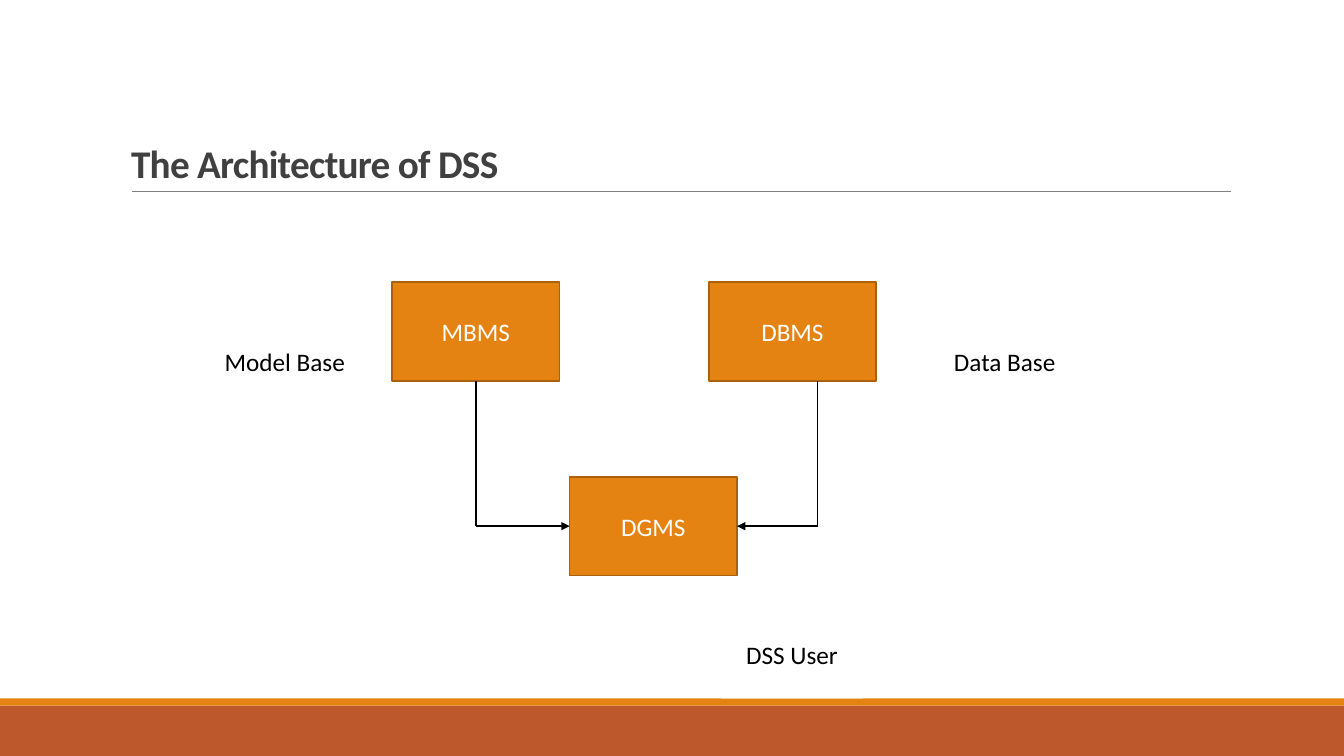
import lxml.etree
import pptx
import pptx.util
import pptx.dml.color
import pptx.enum.shapes
import pptx.enum.text
import pptx.oxml.ns
from pptx.util import Inches

COLORS = {
    "orange": "E48312", "rust": "BD582C", "edge": "A9610D", "rule": "808080",
    "title": "404040", "white": "FFFFFF", "black": "000000",
}
FONT = "Calibri"
BOX_W, BOX_H = 1.66, 0.98
LABEL_W, LABEL_H = 1.41, 0.88


def rgb(name):
    return pptx.dml.color.RGBColor.from_string(COLORS[name])


def add_run(p, text, size, color, bold=False):
    r = p.add_run()
    r.text = text
    r.font.name = FONT
    r.font.size = pptx.util.Pt(size)
    r.font.bold = bold
    r.font.color.rgb = rgb(color)
    return r


def add_rect(s, left, top, width, height, fill, edge=None):
    sp = s.shapes.add_shape(pptx.enum.shapes.MSO_SHAPE.RECTANGLE, Inches(left),
                            Inches(top), Inches(width), Inches(height))
    sp.shadow.inherit = False
    sp.fill.solid()
    sp.fill.fore_color.rgb = rgb(fill)
    if edge:
        sp.line.color.rgb = rgb(edge)
        sp.line.width = pptx.util.Pt(1.25)
    else:
        sp.line.fill.background()
    return sp


def add_centered_text(sp, text, color):
    tf = sp.text_frame
    tf.word_wrap = True
    tf.vertical_anchor = pptx.enum.text.MSO_ANCHOR.MIDDLE
    p = tf.paragraphs[0]
    p.alignment = pptx.enum.text.PP_ALIGN.CENTER
    add_run(p, text, 18, color)


def add_box(s, text, left, top):
    sp = add_rect(s, left, top, BOX_W, BOX_H, "orange", "edge")
    add_centered_text(sp, text, "white")


def add_label(s, text, left, top):
    sp = add_rect(s, left, top, LABEL_W, LABEL_H, "white")
    add_centered_text(sp, text, "black")


def add_line(s, x1, y1, x2, y2, color="black", width=1, arrow=False):
    qn = pptx.oxml.ns.qn
    cn = s.shapes.add_connector(pptx.enum.shapes.MSO_CONNECTOR.STRAIGHT, Inches(x1),
                                Inches(y1), Inches(x2), Inches(y2))
    cn.line.color.rgb = rgb(color)
    cn.line.width = pptx.util.Pt(width)
    props = cn._element.spPr
    if arrow:
        lxml.etree.SubElement(props.find(qn("a:ln")), qn("a:tailEnd"), type="triangle")
    lxml.etree.SubElement(props, qn("a:effectLst"))


def set_title(s, text):
    sp = s.shapes.title
    sp.left, sp.top, sp.width, sp.height = (Inches(v) for v in (1.2, 0.31, 11, 1.59))
    tf = sp.text_frame
    tf.word_wrap = True
    tf.auto_size = pptx.enum.text.MSO_AUTO_SIZE.NONE
    tf.vertical_anchor = pptx.enum.text.MSO_ANCHOR.BOTTOM
    p = tf.paragraphs[0]
    p.alignment = pptx.enum.text.PP_ALIGN.LEFT
    p.line_spacing = 0.85
    r = add_run(p, text, 28, "title", bold=True)
    r.font._element.set("spc", "-50")


def main():
    prs = pptx.Presentation()
    prs.slide_width, prs.slide_height = Inches(13.33), Inches(7.5)
    s = prs.slides.add_slide(prs.slide_layouts[5])

    # Footer bands, title and rule
    add_rect(s, 0, 7, 13.33, 0.5, "rust")
    add_rect(s, 0, 6.93, 13.33, 0.07, "orange")
    add_line(s, 1.31, 1.9, 12.21, 1.9, "rule", 0.5)
    set_title(s, "The Architecture of DSS")

    # Management systems
    top, dialog_left, dialog_top = 2.8, 5.65, 4.73
    for text, left, y in (("MBMS", 3.89, top), ("DBMS", 7.03, top),
                          ("DGMS", dialog_left, dialog_top)):
        add_box(s, text, left, y)

    # Elbow arrows into the dialog system
    middle = dialog_top + BOX_H / 2
    for x, target in ((4.72, dialog_left), (8.11, dialog_left + BOX_W)):
        add_line(s, x, top + BOX_H, x, middle)
        add_line(s, x, middle, target, middle, arrow=True)

    # Labels
    for text, left, y in (("Model Base", 2.12, 3.15), ("Data Base", 9.26, 3.15),
                          ("DSS User", 7.15, 6.05)):
        add_label(s, text, left, y)

    prs.save("out.pptx")


if __name__ == "__main__":
    main()
